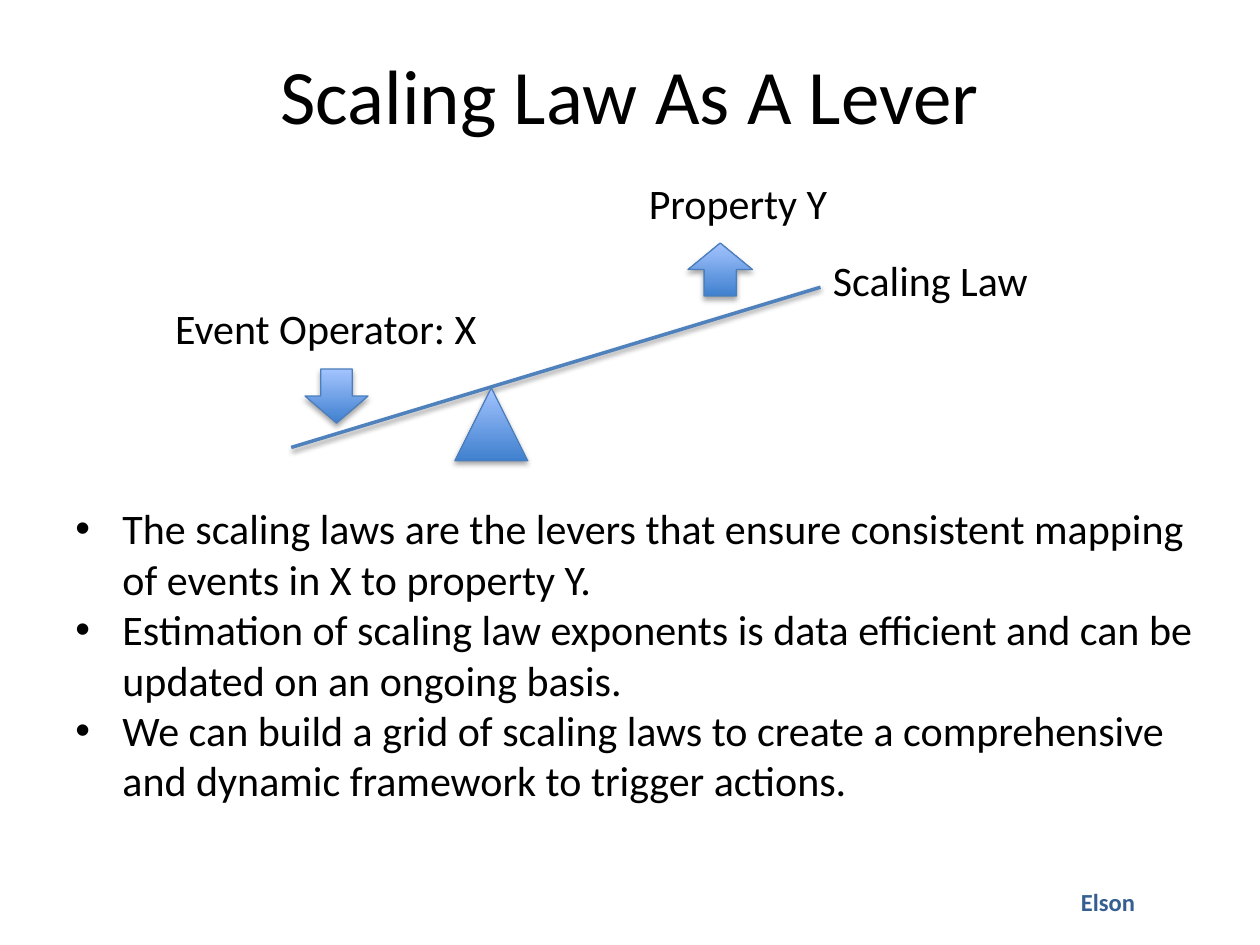
from dataclasses import dataclass

import lxml.etree
import pptx
import pptx.dml.color
import pptx.enum.shapes
import pptx.enum.text
import pptx.oxml
import pptx.oxml.ns
import pptx.util

Cm = pptx.util.Cm
Pt = pptx.util.Pt
RGB = pptx.dml.color.RGBColor
ALIGN = pptx.enum.text.PP_ALIGN
ANCHOR = pptx.enum.text.MSO_ANCHOR
SHAPE = pptx.enum.shapes.MSO_SHAPE
qn = pptx.oxml.ns.qn


@dataclass(frozen=True)
class Theme:
    font: str = "Calibri"
    title_size: int = 44
    text_size: int = 24
    footer_size: int = 14
    text: RGB = RGB(0x00, 0x00, 0x00)
    footer: RGB = RGB(0x36, 0x5F, 0x91)
    beam: RGB = RGB(0x4F, 0x81, 0xBD)
    outline: RGB = RGB(0x4B, 0x7E, 0xBC)
    dark: RGB = RGB(0x3F, 0x80, 0xCE)
    light: RGB = RGB(0xA4, 0xC4, 0xFF)


@dataclass(frozen=True)
class Box:
    """Position and size in centimetres."""
    left: float
    top: float
    width: float
    height: float

    def emu(self) -> tuple:
        return Cm(self.left), Cm(self.top), Cm(self.width), Cm(self.height)


@dataclass(frozen=True)
class Label:
    text: str
    box: Box


@dataclass(frozen=True)
class Part:
    kind: SHAPE
    box: Box


THEME = Theme()
BULLETS = (
    "The scaling laws are the levers that ensure consistent mapping of events in X to property Y.",
    "Estimation of scaling law exponents is data efficient and can be updated on an ongoing basis.",
    "We can build a grid of scaling laws to create a comprehensive and dynamic framework "
    "to trigger actions.",
)
LABELS = (
    Label("Event Operator: X", Box(3.28, 5.97, 6.73, 1.27)),
    Label("Property Y", Box(12.83, 3.45, 4.19, 1.27)),
    Label("Scaling Law", Box(16.54, 5.0, 4.5, 1.27)),
)
PARTS = (
    Part(SHAPE.ISOSCELES_TRIANGLE, Box(9.17, 7.82, 1.47, 1.47)),
    Part(SHAPE.DOWN_ARROW, Box(6.15, 7.44, 1.27, 1.09)),
    Part(SHAPE.UP_ARROW, Box(13.87, 4.9, 1.3, 1.07)),
)


def add_bullet(p) -> None:
    pPr = p._p.get_or_add_pPr()
    pPr.set("marL", str(Cm(0.95)))
    pPr.set("indent", str(-Cm(0.95)))
    lxml.etree.SubElement(pPr, qn("a:buFont")).set("typeface", "Arial")
    lxml.etree.SubElement(pPr, qn("a:buChar")).set("char", "•")


def add_text(s, box: Box, *lines: str, size: int = THEME.text_size, color: RGB = THEME.text,
             bold: bool = False, align=ALIGN.LEFT, anchor=ANCHOR.TOP, wrap: bool = True,
             bullets: bool = False, inset: float = 0.13) -> None:
    tf = s.shapes.add_textbox(*box.emu()).text_frame
    tf.word_wrap = wrap
    tf.vertical_anchor = anchor
    tf.margin_top = tf.margin_bottom = Cm(inset)
    for i, line in enumerate(lines):
        p = tf.add_paragraph() if i else tf.paragraphs[0]
        if bullets:
            add_bullet(p)
        p.alignment = align
        r = p.add_run()
        r.text = line
        r.font.name = THEME.font
        r.font.size = Pt(size)
        r.font.bold = bold
        r.font.color.rgb = color


def add_shadow(sp, opacity: int, distance: float) -> None:
    """Cast a soft black shadow straight down; call after fill and line are set."""
    effects = lxml.etree.SubElement(sp._element.spPr, qn("a:effectLst"))
    shadow = lxml.etree.SubElement(effects, qn("a:outerShdw"), blurRad=str(Pt(3.1)),
                                   dist=str(Pt(distance)), dir="5400000", rotWithShape="0")
    black = lxml.etree.SubElement(shadow, qn("a:srgbClr"), val="000000")
    lxml.etree.SubElement(black, qn("a:alpha"), val=str(opacity * 1000))


def add_beam(s) -> None:
    sp = s.shapes.add_connector(pptx.enum.shapes.MSO_CONNECTOR.STRAIGHT,
                                Cm(5.87), Cm(9.02), Cm(16.54), Cm(5.79))
    sp.line.color.rgb = THEME.beam
    sp.line.width = Pt(2)
    add_shadow(sp, 38, 1.6)


def add_part(s, part: Part) -> None:
    sp = s.shapes.add_shape(part.kind, *part.box.emu())
    sp.fill.gradient()
    sp.fill.gradient_angle = 90
    for stop, color, position in zip(sp.fill.gradient_stops, (THEME.dark, THEME.light), (0, 1)):
        stop.color.rgb = color
        stop.position = position
    sp.line.color.rgb = THEME.outline
    sp.line.width = Pt(0.75)
    add_shadow(sp, 35, 1.8)


def main() -> None:
    prs = pptx.Presentation()
    prs.slide_width, prs.slide_height = Cm(25.4), Cm(19.05)
    s = prs.slides.add_slide(prs.slide_layouts[6])
    add_text(s, Box(21.54, 17.63, 3.05, 1.04), "Elson", size=THEME.footer_size,
             color=THEME.footer, bold=True, inset=0.25)
    add_text(s, Box(1.27, 0.3, 22.86, 3.18), "Scaling Law As A Lever", size=THEME.title_size,
             align=ALIGN.CENTER, anchor=ANCHOR.MIDDLE)
    add_text(s, Box(1.27, 10.01, 23.14, 6.4), *BULLETS, bullets=True)
    for label in LABELS:
        add_text(s, label.box, label.text, wrap=False)
    add_beam(s)
    for part in PARTS:
        add_part(s, part)
    prs.save("out.pptx")


if __name__ == "__main__":
    main()
